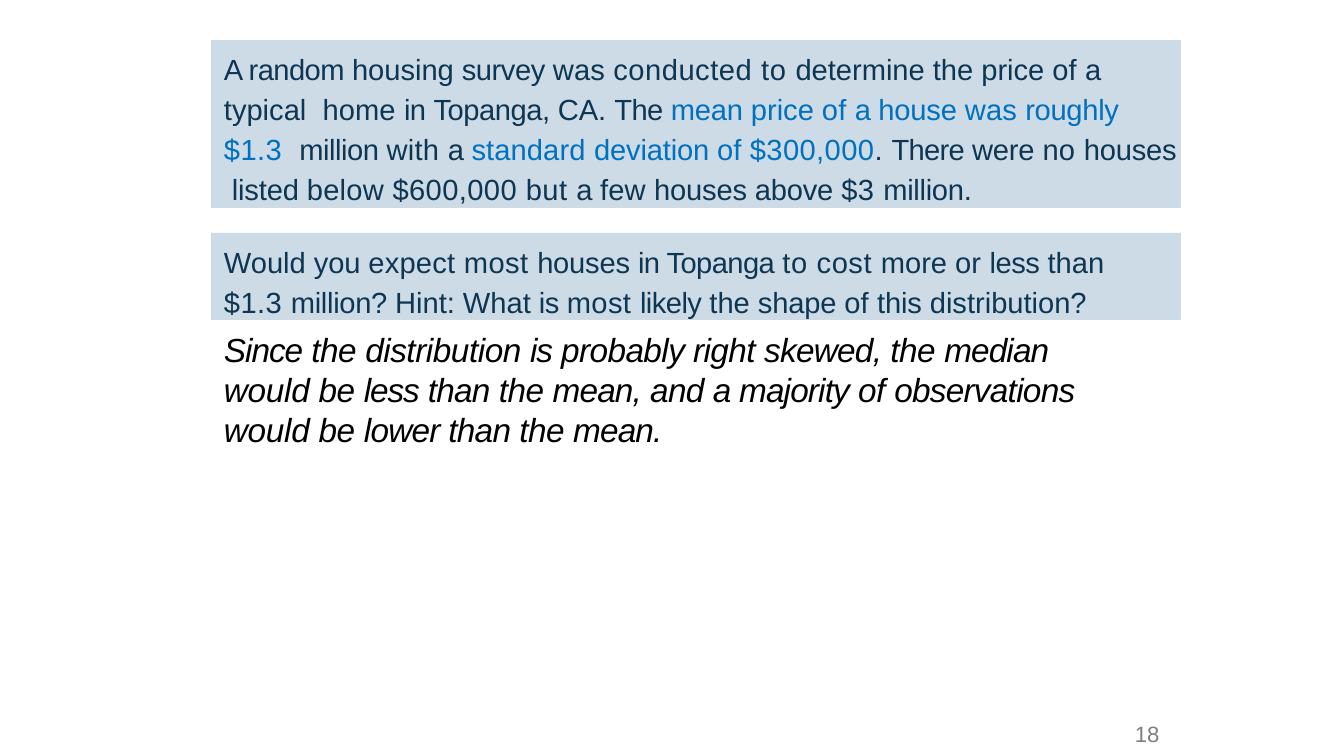
from typing import NamedTuple

from pptx import Presentation
from pptx.dml.color import RGBColor
from pptx.enum.shapes import MSO_SHAPE
from pptx.enum.text import MSO_ANCHOR, MSO_AUTO_SIZE, PP_ALIGN
from pptx.util import Pt

EMU_PER_PX = 914400 / 100.8
FONT = "Arial"
COLORS = {
    "panel": "CCDBE6",
    "navy": "0E3652",
    "blue": "0070C0",
    "black": "000000",
    "gray": "7F7F7F",
}


class Words(NamedTuple):
    text: str
    spacing: float = 0  # points between letters
    color: str = ""  # empty: the colour of the whole text


class Line(NamedTuple):
    words: list[Words]
    before: float  # points


class Box(NamedTuple):
    left: int
    top: int
    width: int
    height: int


def px(length: int) -> int:
    return round(length * EMU_PER_PX)


def rgb(name: str) -> RGBColor:
    return RGBColor.from_string(COLORS[name])


def add_text(slide, box: Box, lines: list[Line], *, size: float, color: str,
             panel: str = "", inset: int = 2, indent: int = 3,
             line_spacing: float = 1.0, italic: bool = False) -> None:
    place = [px(length) for length in box]
    if panel:
        shape = slide.shapes.add_shape(MSO_SHAPE.RECTANGLE, *place)
        shape.shadow.inherit = False
        shape.fill.solid()
        shape.fill.fore_color.rgb = rgb(panel)
        shape.line.fill.background()
    else:
        shape = slide.shapes.add_textbox(*place)

    frame = shape.text_frame
    frame.word_wrap = True
    frame.auto_size = MSO_AUTO_SIZE.SHAPE_TO_FIT_TEXT
    frame.vertical_anchor = MSO_ANCHOR.TOP
    frame.margin_left = frame.margin_right = frame.margin_bottom = 0
    frame.margin_top = px(inset)

    for index, line in enumerate(lines):
        paragraph = frame.add_paragraph() if index else frame.paragraphs[0]
        paragraph.alignment = PP_ALIGN.LEFT
        paragraph.space_before = Pt(line.before)
        paragraph.line_spacing = line_spacing
        paragraph._p.get_or_add_pPr().set("marL", str(px(indent)))
        for words in line.words:
            run = paragraph.add_run()
            run.text = words.text
            run.font.name = FONT
            run.font.size = Pt(size)
            run.font.italic = italic
            run.font.color.rgb = rgb(words.color or color)
            run.font._element.set("spc", str(round(words.spacing * 100)))


SURVEY = [Line([
    Words("A random ", -0.4), Words("housing "), Words("survey ", -0.3),
    Words("was ", 0.1), Words("conducted ", 0.4), Words("to ", 0.5),
    Words("determine the price "), Words("of ", 0.1), Words("a ", -0.4),
    Words("typical  "), Words("home ", 0.1), Words("in ", -0.4),
    Words("Topanga, ", -0.3), Words("CA. "), Words("The ", -0.4),
    Words("mean ", -0.1, "blue"), Words("price ", 0, "blue"),
    Words("of ", 0.1, "blue"), Words("a ", -0.4, "blue"),
    Words("house ", -0.1, "blue"), Words("was ", 0.1, "blue"),
    Words("roughly ", -0.2, "blue"), Words("$1.3  ", 0.3, "blue"),
    Words("million ", -0.3), Words("with ", 0.2), Words("a ", -0.4),
    Words("standard ", 0.1, "blue"), Words("deviation ", -0.1, "blue"),
    Words("of ", 0.1, "blue"), Words("$300,000", 0.3, "blue"),
    Words(". ", 0.3), Words("There ", -0.5), Words("were ", -0.1),
    Words("no ", 0.2), Words("houses  listed ", -0.1), Words("below ", 0.2),
    Words("$600,000 ", 0.3), Words("but ", 0.4), Words("a ", -0.4),
    Words("few ", 0.1), Words("houses above ", -0.1), Words("$3 ", 0.4),
    Words("million.", -0.2),
], before=4)]

QUESTION = [
    Line([
        Words("Would "), Words("you ", -0.1), Words("expect ", 0.2),
        Words("most ", 0.3), Words("houses ", -0.1),
        Words("in Topanga ", -0.4), Words("to ", 0.5), Words("cost ", 0.4),
        Words("more "), Words("or ", 0.1), Words("less ", -0.3),
        Words("than"),
    ], before=7.8),
    Line([
        Words("$1.3 ", 0.3), Words("million? ", -0.2), Words("Hint: What "),
        Words("is ", -0.4), Words("most ", 0.3), Words("likely ", -0.4),
        Words("the "), Words("shape ", -0.1), Words("of ", 0.1),
        Words("this ", -0.1), Words("distribution?"),
    ], before=3.7),
]

ANSWER = [Line([
    Words("Since ", -0.7), Words("the ", -0.4), Words("distribution ", -0.3),
    Words("is ", -0.8), Words("probably right ", -0.4),
    Words("skewed, ", -0.5), Words("the ", -0.4), Words("median ", -0.6),
    Words("would ", -0.2), Words("be ", -0.4), Words("less ", -0.8),
    Words("than ", -0.5), Words("the ", -0.4), Words("mean, ", -0.6),
    Words("and ", -0.5), Words("a ", -1), Words("majority ", -0.6),
    Words("of ", -0.3), Words("observations ", -0.5), Words("would ", -0.2),
    Words("be ", -0.4), Words("lower than ", -0.5), Words("the ", -0.4),
    Words("mean.", -0.6),
], before=1.8)]

PAGE_NUMBER = [Line([Words("18", -0.1)], before=1.1)]


def main() -> None:
    deck = Presentation()
    deck.slide_width, deck.slide_height = px(1344), px(756)
    slide = deck.slides.add_slide(deck.slide_layouts[6])

    # Page number
    add_text(slide, Box(1132, 718, 30, 28), PAGE_NUMBER, size=15.8, color="gray")
    # Question and its answer
    add_text(slide, Box(211, 233, 970, 87), QUESTION, size=20.8, color="navy",
             panel="panel", inset=11, indent=13)
    add_text(slide, Box(221, 327, 863, 124), ANSWER, size=23.8, color="black",
             italic=True)
    # Survey description
    add_text(slide, Box(211, 40, 970, 168), SURVEY, size=20.8, color="navy",
             panel="panel", inset=6, indent=13, line_spacing=1.15)

    deck.save("out.pptx")


if __name__ == "__main__":
    main()
